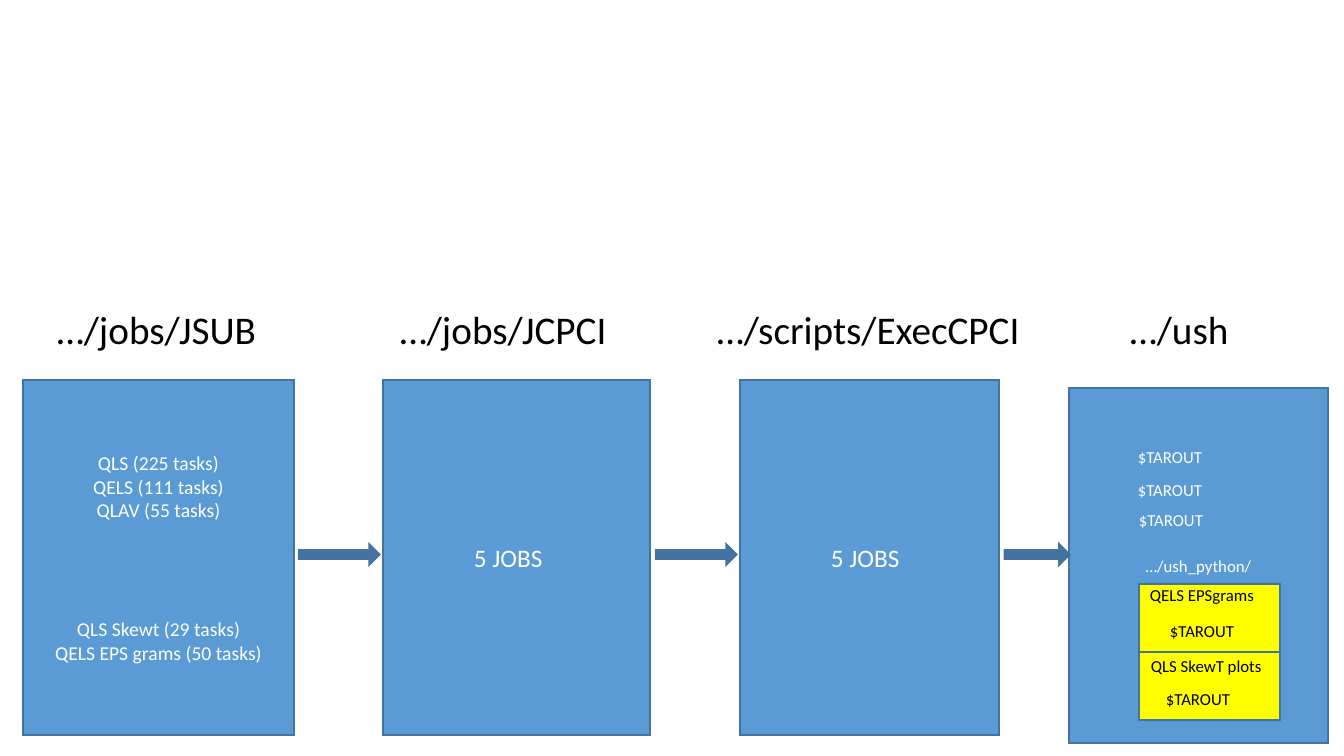
import lxml.etree
import pptx
import pptx.dml.color
import pptx.enum.shapes
import pptx.enum.text
import pptx.oxml.ns
import pptx.util

SHAPE = pptx.enum.shapes.MSO_SHAPE
ALIGN = pptx.enum.text.PP_ALIGN
ANCHOR = pptx.enum.text.MSO_ANCHOR
AUTO = pptx.enum.text.MSO_AUTO_SIZE
Pt = pptx.util.Pt

COLORS = {"blue": "5B9BD5", "edge": "43739E", "yellow": "FFFF00",
          "white": "FFFFFF", "black": "000000"}
EMU_PER_PX = 914400 / 100.8


def px(n):
    return pptx.util.Emu(round(n * EMU_PER_PX))


def rgb(name):
    return pptx.dml.color.RGBColor.from_string(COLORS[name])


class Deck:
    font = "Calibri"

    def __init__(self, width, height):
        self.prs = pptx.Presentation()
        self.prs.slide_width, self.prs.slide_height = px(width), px(height)
        self.s = self.prs.slides.add_slide(self.prs.slide_layouts[6])

    def paragraph(self, p, text, size, color, **fmt):
        r = p.add_run()
        r.text = text
        for key, value in {"name": self.font, "size": Pt(size)}.items():
            setattr(r.font, key, value)
        r.font.color.rgb = rgb(color)
        for key, value in fmt.items():
            setattr(p, key, value)

    def shape(self, kind, at, fill="blue", line=1):
        sp = self.s.shapes.add_shape(kind, *map(px, at))
        sp.shadow.inherit = False
        sp.fill.solid()
        sp.fill.fore_color.rgb = rgb(fill)
        sp.line.color.rgb = rgb("edge")
        sp.line.width = Pt(line)
        # Sharp outline corners
        ln = sp.element.spPr.find(pptx.oxml.ns.qn("a:ln"))
        lxml.etree.SubElement(ln, pptx.oxml.ns.qn("a:miter"), lim="800000")
        return sp

    def box(self, at, lines=(), size=14, fill="blue"):
        """Rectangle with centred lines, each a (text, space before) pair."""
        tf = self.shape(SHAPE.RECTANGLE, at, fill).text_frame
        tf.word_wrap, tf.vertical_anchor = True, ANCHOR.MIDDLE
        for i, (text, gap) in enumerate(lines):
            p = tf.add_paragraph() if i else tf.paragraphs[0]
            self.paragraph(p, text, size, "white",
                           alignment=ALIGN.CENTER, space_before=Pt(gap))

    def arrow(self, at):
        self.shape(SHAPE.RIGHT_ARROW, at, line=6)

    def text(self, at, text, size, color="black", **frame):
        tf = self.s.shapes.add_textbox(*map(px, at)).text_frame
        fmt = {"word_wrap": True, "auto_size": AUTO.SHAPE_TO_FIT_TEXT, **frame}
        for key, value in fmt.items():
            setattr(tf, key, value)
        self.paragraph(tf.paragraphs[0], text, size, color)


def main():
    deck = Deck(1344, 756)

    # Stage boxes
    tasks = [("QLS (225 tasks)", 0), ("QELS (111 tasks)", 0),
             ("QLAV (55 tasks)", 0), ("QLS Skewt (29 tasks)", 68),
             ("QELS EPS grams (50 tasks)", 0)]
    deck.box((23, 380, 271, 355), tasks)
    deck.box((383, 380, 267, 355))
    deck.box((740, 380, 259, 355))
    deck.box((1069, 388, 259, 355), [("…/ush_python/", 0)], size=12)

    # Arrows between stages
    for x, w in ((302, 73), (659, 73), (1008, 57)):
        deck.arrow((x, 552, w, 5))

    # Stage headings
    for x, w, heading in ((47, 222, "…/jobs/JSUB"), (390, 230, "…/jobs/JCPCI"),
                          (707, 327, "…/scripts/ExecCPCI"), (1120, 120, "…/ush")):
        deck.text((x, 300, w, 57), heading, 28, word_wrap=False)

    # Job counts
    for x in (418, 775):
        deck.text((x, 537, 201, 40), "5 JOBS", 18, "white", margin_left=px(56))

    # Shell outputs
    for x, y in ((1128, 442), (1128, 475), (1129, 505)):
        deck.text((x, y, 112, 30), "$TAROUT", 12, "white")

    # Python plots and their outputs
    for y in (584, 652):
        deck.box((1139, y, 141, 68), fill="yellow")
    for x, y, w, label in ((1140, 580, 124, "QELS EPSgrams"),
                           (1141, 651, 131, "QLS SkewT plots")):
        deck.text((x, y, w, 30), label, 12)
    for x, y in ((1160, 616), (1156, 684)):
        deck.text((x, y, 86, 30), "$TAROUT", 12, word_wrap=False)

    deck.prs.save("out.pptx")


if __name__ == "__main__":
    main()
